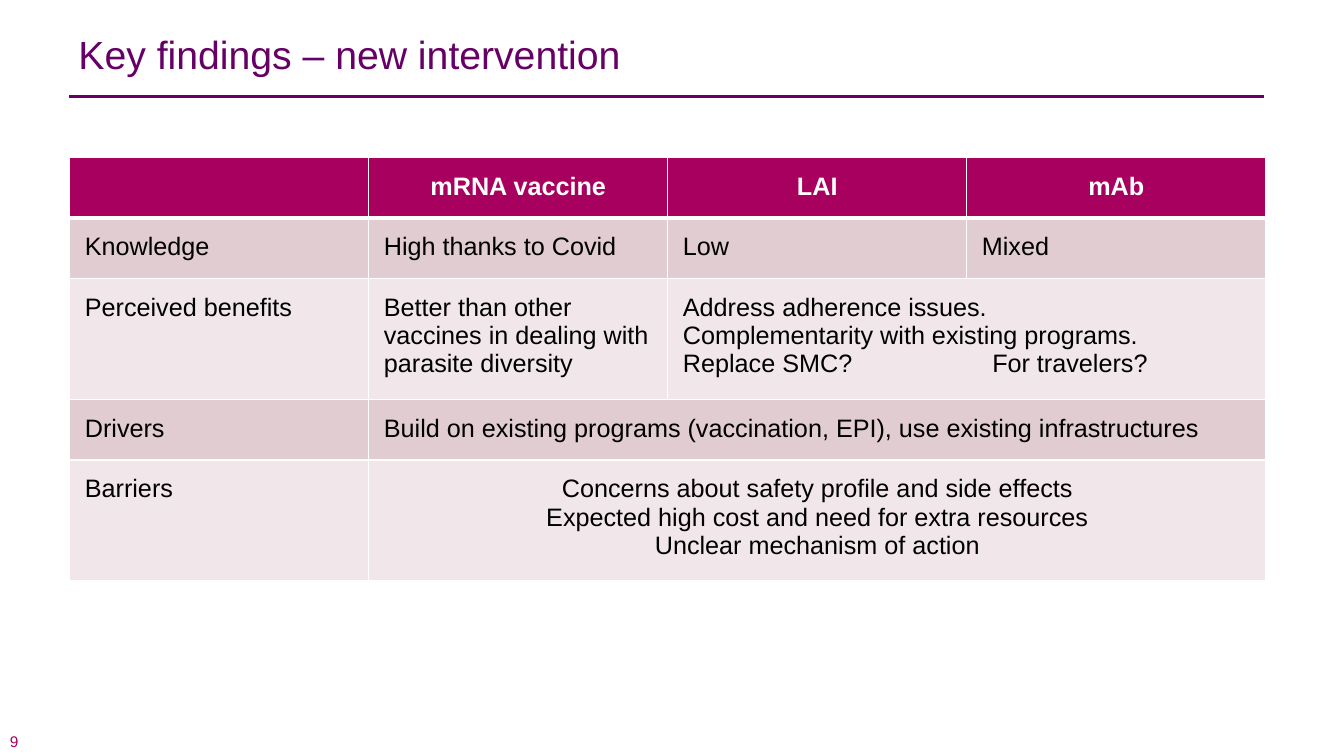
from lxml import etree
from pptx import Presentation
from pptx import util as u
from pptx.dml.color import RGBColor
from pptx.enum import shapes, text
from pptx.oxml import ns

COLORS = {
    "title": "660066",
    "accent": "A7005F",
    "band_dark": "E1CCD2",
    "band_light": "F1E7EA",
    "white": "FFFFFF",
    "black": "000000",
}
CENTER = text.PP_ALIGN.CENTER
LEFT = text.PP_ALIGN.LEFT


def add_xml(parent, tag, **attributes):
    element = etree.SubElement(parent, ns.qn(tag))
    for name, value in attributes.items():
        element.set(name, str(value))
    return element


class SlideBuilder:
    font_name = "Arial"
    cell_margin = u.Pt(10.8)
    tab_stop = u.Pt(221)

    def __init__(self, page):
        self.page = page

    def color(self, name):
        return RGBColor.from_string(COLORS[name])

    def add_span(self, para, words, size, color, bold=False):
        span = para.add_run()
        span.text = words
        values = {"name": self.font_name, "size": u.Pt(size), "bold": bold}
        for name, value in values.items():
            setattr(span.font, name, value)
        span.font.color.rgb = self.color(color)

    def label(self, words, left, top, width, height, size, color,
              anchor=text.MSO_ANCHOR.TOP, margin=3.6, spacing=None):
        box = self.page.shapes.add_textbox(
            *(u.Pt(length) for length in (left, top, width, height)))
        frame = box.text_frame
        values = {"word_wrap": True, "vertical_anchor": anchor,
                  "margin_top": u.Pt(margin), "margin_bottom": u.Pt(margin)}
        for name, value in values.items():
            setattr(frame, name, value)
        para = frame.paragraphs[0]
        if spacing:
            para.line_spacing = u.Pt(spacing)
        self.add_span(para, words, size, color)

    def rule(self, left, right, y, color, weight):
        line = self.page.shapes.add_connector(
            shapes.MSO_CONNECTOR.STRAIGHT,
            u.Pt(left), u.Pt(y), u.Pt(right), u.Pt(y))
        line.line.color.rgb = self.color(color)
        line.line.width = u.Pt(weight)
        add_xml(line._element.spPr, "a:effectLst")

    def borders(self, cell, bottom, top):
        properties = cell._tc.get_or_add_tcPr()
        weights = {"a:lnL": 1, "a:lnR": 1, "a:lnT": top, "a:lnB": bottom}
        for index, (tag, weight) in enumerate(weights.items()):
            edge = add_xml(properties, tag, w=u.Pt(weight))
            fill = add_xml(edge, "a:solidFill")
            add_xml(fill, "a:srgbClr", val=COLORS["white"])
            properties.insert(index, edge)

    def fill_cell(self, cell, lines, align, color, bold):
        frame = cell.text_frame
        for index, words in enumerate(lines):
            para = frame.paragraphs[0] if index == 0 else frame.add_paragraph()
            para.alignment = align
            if "\t" in words:
                stops = add_xml(para._p.get_or_add_pPr(), "a:tabLst")
                add_xml(stops, "a:tab", pos=self.tab_stop, algn="l")
            self.add_span(para, words, 18, color, bold)

    def table(self, left, top, column_width, heights, rows):
        columns = len(rows[0])
        frame = self.page.shapes.add_table(
            len(rows), columns, u.Pt(left), u.Pt(top),
            u.Pt(column_width * columns), u.Pt(sum(heights)))
        grid = frame.table
        for column in grid.columns:
            column.width = u.Pt(column_width)
        for r, (height, entries) in enumerate(zip(heights, rows)):
            grid.rows[r].height = u.Pt(height)
            header = r == 0
            band = "accent" if header else ("band_light", "band_dark")[r % 2]
            # Cell style
            for c in range(columns):
                cell = grid.cell(r, c)
                for side in ("left", "right", "top", "bottom"):
                    setattr(cell, f"margin_{side}", self.cell_margin)
                cell.fill.solid()
                cell.fill.fore_color.rgb = self.color(band)
                self.borders(cell, bottom=3 if header else 1,
                             top=3 if r == 1 else 1)
            # Cell text; the last entry spans the columns that remain
            for c, (words, align) in enumerate(entries):
                cell = grid.cell(r, c)
                if c == len(entries) - 1 and c < columns - 1:
                    cell.merge(grid.cell(r, columns - 1))
                if words:
                    self.fill_cell(cell, words.split("\n"), align,
                                   "white" if header else "black", header)


def main():
    deck = Presentation()
    deck.slide_width, deck.slide_height = u.Pt(960), u.Pt(540)
    builder = SlideBuilder(deck.slides.add_slide(deck.slide_layouts[6]))

    # Page number
    builder.label("9", 0, 522.72, 76.32, 13, 11, "accent",
                  anchor=text.MSO_ANCHOR.MIDDLE, margin=0)

    # Title and rule
    builder.label("Key findings – new intervention", 49, 26, 854.6, 54,
                  28, "title", spacing=26)
    builder.rule(49.5, 903, 69, "title", 2)

    # Findings by intervention
    rows = [
        [("", CENTER), ("mRNA vaccine", CENTER), ("LAI", CENTER),
         ("mAb", CENTER)],
        [("Knowledge", LEFT), ("High thanks to Covid", LEFT), ("Low", LEFT),
         ("Mixed", LEFT)],
        [("Perceived benefits", LEFT),
         ("Better than other vaccines in dealing with parasite diversity",
          LEFT),
         ("Address adherence issues.\n"
          "Complementarity with existing programs.\n"
          "Replace SMC?\tFor travelers?", LEFT)],
        [("Drivers", LEFT),
         ("Build on existing programs (vaccination, EPI), "
          "use existing infrastructures", LEFT)],
        [("Barriers", LEFT),
         ("Concerns about safety profile and side effects\n"
          "Expected high cost and need for extra resources\n"
          "Unclear mechanism of action", CENTER)],
    ]
    one_line, three_lines = 41.7, 82
    builder.table(49.8, 112.4, 213.6,
                  [one_line, one_line, three_lines, one_line, three_lines],
                  rows)

    deck.save("out.pptx")


if __name__ == "__main__":
    main()
